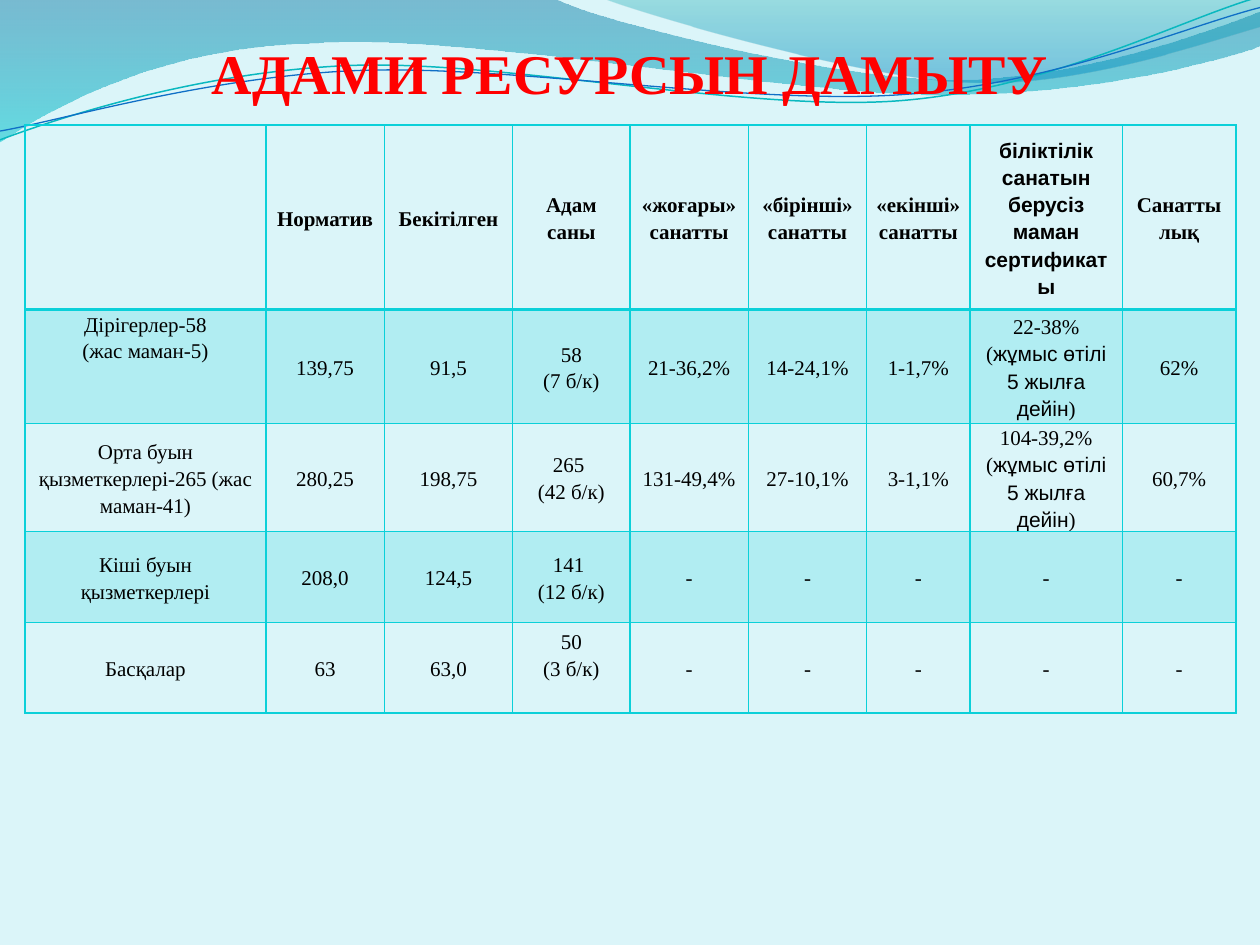
import dataclasses
import math

import lxml.etree
import pptx
import pptx.dml.color
import pptx.enum.text
import pptx.oxml.ns
import pptx.util

Inches = pptx.util.Inches
Anchor = pptx.enum.text.MSO_ANCHOR


@dataclasses.dataclass(frozen=True)
class Theme:
    """Colours, fonts and sizes of the slide."""
    background: str = "DBF5F9"
    title: str = "FF0000"
    text: str = "000000"
    accent: str = "0BD0D9"
    teal_line: str = "0AB8BF"
    blue_line: str = "0F6FC6"
    serif: str = "Times New Roman"
    sans: str = "Arial"
    title_size: int = 32
    cell_size: int = 12
    band_alpha: int = 20
    rule: int = 1
    header_rule: int = 2


THEME = Theme()

BROAD_WAVE = [
    (0, 0), (4.4, -0.01), (4.76, 0.17, 6.64, 0.63, 7.58, 0.63),
    (8.53, 0.63, 9.58, 0.26, 10, 0.09), (10.01, 0.36),
    (9.83, 0.44, 8.7, 0.76, 7.46, 0.75), (6.22, 0.75, 3.82, 0.28, 2.57, 0.34),
    (1.29, 0.36, 0.46, 0.83, -0.01, 1.13), (0, 0),
]
RIGHT_WAVE = [
    (4.79, -0.01), (5.09, 0.11, 6.82, 0.62, 7.69, 0.65),
    (8.56, 0.69, 9.61, 0.32, 10, 0.21), (10, 0), (4.79, -0.01),
]
TEAL_STRAND = [
    (0, 1.11), (0.48, 0.93, 1.58, 0.57, 2.77, 0.52),
    (3.95, 0.47, 5.93, 0.89, 7.13, 0.8), (8.33, 0.71, 9.38, 0.15, 9.98, -0.02),
]
BLUE_STRAND = [
    (0, 1.04), (0.47, 0.96, 1.64, 0.61, 2.83, 0.56),
    (4.03, 0.51, 5.97, 0.84, 7.17, 0.75), (8.36, 0.67, 9.41, 0.21, 10, 0.06),
]
STRAND_TILT = -2.7
STRAND_CENTRE = (4.99, 0.58)

COLUMN_WIDTHS = [1.91, 0.94, 1.02, 0.93, 0.94, 0.94, 0.82, 1.21, 0.9]
ROW_HEIGHTS = [1.47, 0.9, 0.72, 0.72, 0.72]
CERTIFICATE_HEADING = "біліктілік санатын берусіз маман сертификаты"
EXPERIENCE = "жұмыс өтілі 5 жылға дейін"
SANS_RUNS = {CERTIFICATE_HEADING, EXPERIENCE}
NO_CATEGORY = ["-"] * 5
STAFF = [
    ["", "Норматив", "Бекітілген", "Адам саны", "«жоғары» санатты",
     "«бірінші» санатты", "«екінші» санатты", CERTIFICATE_HEADING, "Санаттылық"],
    ["Дірігерлер-58\n(жас маман-5)", "139,75", "91,5", "58\n(7 б/к)", "21-36,2%",
     "14-24,1%", "1-1,7%", f"22-38%\n(|{EXPERIENCE}|)", "62%"],
    ["Орта буын қызметкерлері-265 (жас маман-41)", "280,25", "198,75",
     "265 \n(42 б/к)", "131-49,4%", "27-10,1%", "3-1,1%",
     f" 104-39,2% \n(|{EXPERIENCE}|)", "60,7%"],
    ["Кіші буын қызметкерлері", "208,0", "124,5", "141 \n(12 б/к)", *NO_CATEGORY],
    ["Басқалар", "63", "63,0", "50\n(3 б/к)", *NO_CATEGORY],
]


def rgb(colour):
    """Turn a hex string into a colour value."""
    return pptx.dml.color.RGBColor.from_string(colour)


def add_node(parent, tag, **attributes):
    """Append a drawing element with the given attributes."""
    node = lxml.etree.SubElement(parent, pptx.oxml.ns.qn(tag))
    for key, value in attributes.items():
        node.set(key, str(value))
    return node


def add_run(paragraph, text, size, colour, font, bold):
    """Add one formatted run to a paragraph."""
    run = paragraph.add_run()
    run.text = text
    run.font.size = pptx.util.Pt(size)
    run.font.color.rgb = rgb(colour)
    run.font.name = font
    run.font.bold = bold


def turn(point, angle):
    """Turn a point about the centre of the strands."""
    dx, dy = point[0] - STRAND_CENTRE[0], point[1] - STRAND_CENTRE[1]
    cosine, sine = math.cos(math.radians(angle)), math.sin(math.radians(angle))
    return (STRAND_CENTRE[0] + dx * cosine - dy * sine,
            STRAND_CENTRE[1] + dx * sine + dy * cosine)


def add_outline(slide, outline, box, tilt=0):
    """Draw an outline of lines and cubic curves offset by its box corner."""
    left, top = box
    points = [turn(segment[i:i + 2], -tilt)
              for segment in outline for i in range(0, len(segment), 2)]
    corners = [(Inches(left + x), Inches(top + y)) for x, y in points]
    builder = slide.shapes.build_freeform(*corners[0])
    builder.add_line_segments(corners[1:], close=outline[0] == outline[-1])
    shape = builder.convert_to_shape()
    lines = iter(shape._element.findall(".//" + pptx.oxml.ns.qn("a:lnTo")))
    for segment in outline[1:]:
        first = next(lines)
        if len(segment) == 6:
            first.tag = pptx.oxml.ns.qn("a:cubicBezTo")
            for line in (next(lines), next(lines)):
                first.append(line[0])
                line.getparent().remove(line)
    shape.rotation = tilt
    shape.shadow.inherit = False
    return shape


def add_wave(slide, outline, box, stops):
    """Add a filled wave with a translucent downward gradient."""
    wave = add_outline(slide, outline, box)
    wave.line.fill.background()
    wave.fill.gradient()
    gradient = wave._element.spPr.find(pptx.oxml.ns.qn("a:gradFill"))
    for child in list(gradient):
        gradient.remove(child)
    stop_list = add_node(gradient, "a:gsLst")
    for position, colour, alpha in stops:
        stop = add_node(stop_list, "a:gs", pos=position * 1000)
        add_node(add_node(stop, "a:srgbClr", val=colour), "a:alpha", val=alpha * 1000)
    add_node(gradient, "a:lin", ang=5400000, scaled=0)


def add_strand(slide, outline, box, colour, width):
    """Add a thin curved line."""
    strand = add_outline(slide, outline, box, STRAND_TILT)
    strand.fill.background()
    strand.line.color.rgb = rgb(colour)
    strand.line.width = pptx.util.Pt(width)


def add_wave_header(slide, box):
    """Place the waves and strands of the top decoration."""
    add_wave(slide, BROAD_WAVE, box, [(0, "0074A1", 45), (100, "00C6CF", 55)])
    add_wave(slide, RIGHT_WAVE, box, [(0, "00A1A9", 30), (80, "008BBF", 45)])
    add_strand(slide, TEAL_STRAND, box, THEME.teal_line, 0.85)
    add_strand(slide, BLUE_STRAND, box, THEME.blue_line, 0.75)


def place_title(slide, box):
    """Move the title placeholder to its box, in front of the waves."""
    title = slide.shapes.title
    slide.shapes._spTree.append(title._element)
    title.left, title.top, title.width, title.height = map(Inches, box)
    frame = title.text_frame
    frame.word_wrap = True
    frame.auto_size = pptx.enum.text.MSO_AUTO_SIZE.NONE
    frame.vertical_anchor = Anchor.BOTTOM
    frame.margin_left = frame.margin_right = frame.margin_bottom = 0
    frame.margin_top = Inches(0.05)
    heading = frame.paragraphs[0]
    heading.alignment = pptx.enum.text.PP_ALIGN.CENTER
    add_run(heading, "АДАМИ РЕСУРСЫН ДАМЫТУ", THEME.title_size, THEME.title, THEME.serif, True)


def format_cell(cell, row):
    """Give a cell its borders, band fill and margins."""
    properties = cell._tc.get_or_add_tcPr()
    widths = {"L": THEME.rule, "R": THEME.rule,
              "T": THEME.header_rule if row == 1 else THEME.rule,
              "B": THEME.header_rule if row == 0 else THEME.rule}
    for side, width in widths.items():
        border = add_node(properties, f"a:ln{side}", w=pptx.util.Pt(width))
        add_node(add_node(border, "a:solidFill"), "a:srgbClr", val=THEME.accent)
    if row % 2:
        cell.fill.solid()
        cell.fill.fore_color.rgb = rgb(THEME.accent)
        colour = properties.find(pptx.oxml.ns.qn("a:solidFill"))[0]
        add_node(colour, "a:alpha", val=THEME.band_alpha * 1000)
    else:
        cell.fill.background()
    cell.margin_left = cell.margin_right = Inches(0.07)
    cell.margin_top = cell.margin_bottom = 0
    cell.vertical_anchor = Anchor.MIDDLE


def fill_cell(cell, content, bold):
    """Write content with lines split at breaks and runs at bars."""
    for index, line in enumerate(content.split("\n")):
        frame = cell.text_frame
        paragraph = frame.add_paragraph() if index else frame.paragraphs[0]
        paragraph.alignment = pptx.enum.text.PP_ALIGN.CENTER
        paragraph.line_spacing = 1.15
        for text in filter(None, line.split("|")):
            font = THEME.sans if text in SANS_RUNS else THEME.serif
            add_run(paragraph, text, THEME.cell_size, THEME.text, font, bold)


def add_staff_table(slide, box):
    """Place the staffing table in its box."""
    staff = slide.shapes.add_table(len(STAFF), len(COLUMN_WIDTHS), *map(Inches, box)).table
    staff.first_row = staff.horz_banding = False
    for column, width in zip(staff.columns, COLUMN_WIDTHS):
        column.width = Inches(width)
    for row, (contents, height) in enumerate(zip(STAFF, ROW_HEIGHTS)):
        staff.rows[row].height = Inches(height)
        for column, content in enumerate(contents):
            cell = staff.cell(row, column)
            format_cell(cell, row)
            fill_cell(cell, content, row == 0)
    staff.cell(1, 0).vertical_anchor = Anchor.TOP
    staff.cell(4, 3).margin_bottom = Inches(0.22)


def main():
    """Build and save the slide."""
    deck = pptx.Presentation()
    deck.slide_width, deck.slide_height = Inches(10), Inches(7.5)
    slide = deck.slides.add_slide(deck.slide_layouts[5])
    slide.background.fill.solid()
    slide.background.fill.fore_color.rgb = rgb(THEME.background)
    add_wave_header(slide, (0, 0))
    place_title(slide, (0.5, 0.29, 9, 0.55))
    add_staff_table(slide, (0.2, 0.99, sum(COLUMN_WIDTHS), sum(ROW_HEIGHTS)))
    deck.save("out.pptx")


if __name__ == "__main__":
    main()
